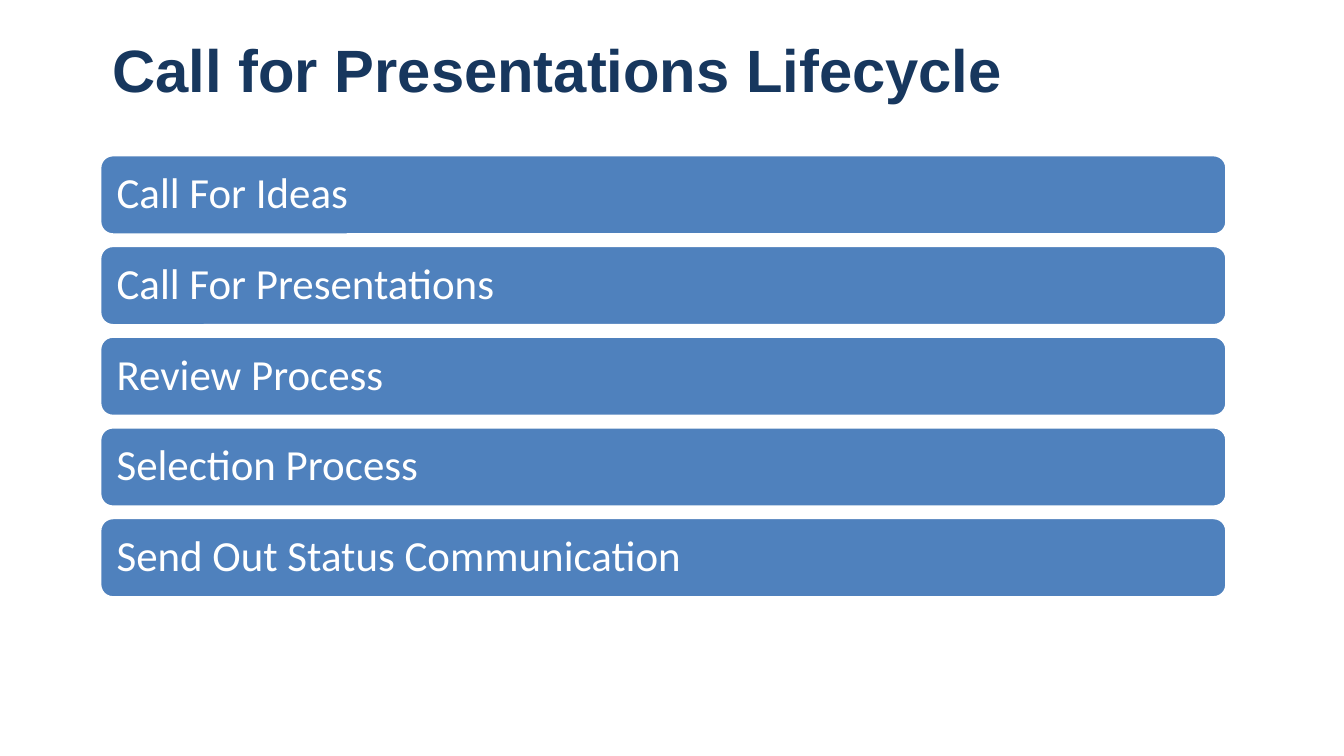
from dataclasses import dataclass

import pptx
import pptx.dml.color
import pptx.enum.shapes
import pptx.enum.text
import pptx.util

Inches = pptx.util.Inches


@dataclass(frozen=True)
class Theme:
    navy: str = "17375E"
    blue: str = "4F81BD"
    white: str = "FFFFFF"
    title_font: str = "Arial"
    body_font: str = "Calibri"
    title_size: float = 32
    stage_size: float = 23
    outline_width: float = 2


@dataclass(frozen=True)
class Box:
    left: float
    top: float
    width: float
    height: float

    def lengths(self) -> tuple:
        return tuple(Inches(n) for n in (self.left, self.top, self.width, self.height))


@dataclass(frozen=True)
class Stage:
    label: str
    box: Box


THEME = Theme()
LEFT = 0.74
FIRST_TOP, LAST_TOP = 1.15, 3.85
STAGE_WIDTH, STAGE_HEIGHT = 8.39, 0.6
STAGE_LABELS = (
    "Call For Ideas",
    "Call For Presentations",
    "Review Process",
    "Selection Process",
    "Send Out Status Communication",
)
STAGE_PITCH = (LAST_TOP - FIRST_TOP) / (len(STAGE_LABELS) - 1)


def rgb(value: str) -> pptx.dml.color.RGBColor:
    return pptx.dml.color.RGBColor.from_string(value)


def write_text(shape, text: str, *, font: str, size: float, color: str,
               bold: bool = False, line_spacing: float = 1.0, inset: float = 0.1) -> None:
    """Fill a shape with one left-aligned, vertically centred paragraph."""
    frame = shape.text_frame
    frame.word_wrap = True
    frame.vertical_anchor = pptx.enum.text.MSO_ANCHOR.MIDDLE
    frame.margin_left = frame.margin_right = Inches(inset)
    frame.margin_top = frame.margin_bottom = Inches(inset)
    paragraph = frame.paragraphs[0]
    paragraph.alignment = pptx.enum.text.PP_ALIGN.LEFT
    paragraph.line_spacing = line_spacing
    run = paragraph.add_run()
    run.text = text
    run.font.name = font
    run.font.size = pptx.util.Pt(size)
    run.font.bold = bold
    run.font.color.rgb = rgb(color)


def draw_title(slide, text: str, box: Box) -> None:
    shape = slide.shapes.add_textbox(*box.lengths())
    write_text(shape, text, font=THEME.title_font, size=THEME.title_size,
               color=THEME.navy, bold=True)


def draw_stage(slide, stage: Stage) -> None:
    shape = slide.shapes.add_shape(
        pptx.enum.shapes.MSO_SHAPE.ROUNDED_RECTANGLE, *stage.box.lengths())
    shape.shadow.inherit = False
    shape.fill.solid()
    shape.fill.fore_color.rgb = rgb(THEME.blue)
    shape.line.color.rgb = rgb(THEME.white)
    shape.line.width = pptx.util.Pt(THEME.outline_width)
    write_text(shape, stage.label, font=THEME.body_font, size=THEME.stage_size,
               color=THEME.white, line_spacing=0.9)


def main() -> None:
    # Widescreen 16:9 slide
    presentation = pptx.Presentation()
    presentation.slide_width = Inches(10)
    presentation.slide_height = Inches(10 * 9 / 16)
    slide = presentation.slides.add_slide(presentation.slide_layouts[6])

    # Title
    draw_title(slide, "Call for Presentations Lifecycle", Box(LEFT, 0.04, 8.97, 0.94))

    # Lifecycle stages, stacked at an even pitch
    for index, label in enumerate(STAGE_LABELS):
        top = FIRST_TOP + index * STAGE_PITCH
        draw_stage(slide, Stage(label, Box(LEFT, top, STAGE_WIDTH, STAGE_HEIGHT)))

    presentation.save("out.pptx")


if __name__ == "__main__":
    main()
